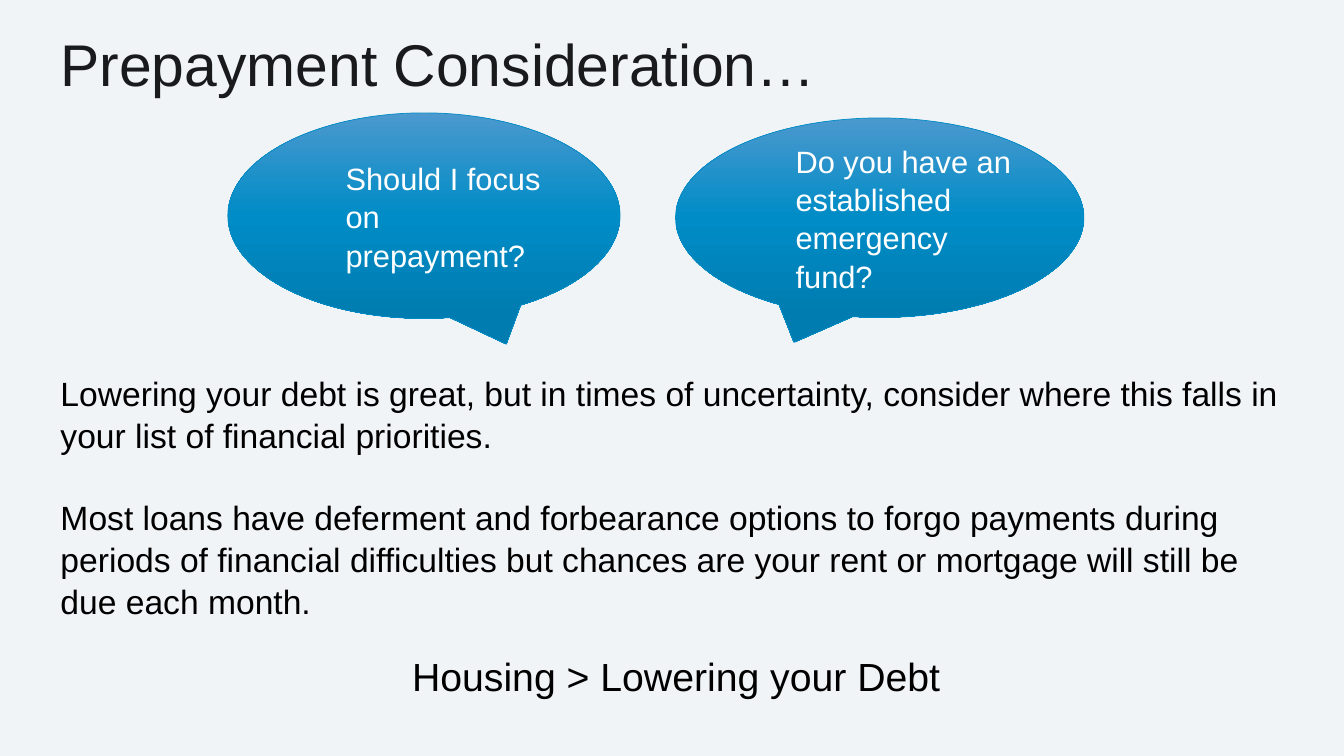
from lxml.etree import SubElement
from pptx import Presentation
from pptx.dml.color import RGBColor
from pptx.enum.shapes import MSO_SHAPE as Shape
from pptx.enum.text import MSO_ANCHOR as Anchor, MSO_AUTO_SIZE as AutoSize, PP_ALIGN as Align
from pptx.oxml.ns import qn
from pptx.util import Inches, Pt

COLORS = {
    "page": "F1F4F7", "title": "181A1C", "body": "000000", "bubble_text": "FFFFFF",
    "bubble_top": "4B99CE", "bubble": "008CC6", "bubble_base": "007CB0",
}
BUBBLE_STOPS = [(0, "bubble_top"), (50, "bubble"), (100, "bubble_base")]
BUBBLE_INDENT = Inches(0.5)
TAIL_SHIFT = 0.21
BUBBLES = [
    ("Do you have an established emergency fund?", (6.7, 1.17, 4.05, 1.98), -TAIL_SHIFT),
    ("Should I focus on prepayment?", (2.26, 1.12, 3.89, 2.04), TAIL_SHIFT),
]
BODY = [
    ("Lowering your debt is great, but in times of uncertainty, consider where this "
     "falls in your list of financial priorities.", 24, 0, Align.LEFT),
    ("Most loans have deferment and forbearance options to forgo payments during periods "
     "of financial difficulties but chances are your rent or mortgage will still be due "
     "each month.", 24, 28.8, Align.LEFT),
    ("Housing > Lowering your Debt", 28, 21.5, Align.CENTER),
]


def color(name):
    return RGBColor.from_string(COLORS[name])


def place(shape, box):
    for name, value in zip(("left", "top", "width", "height"), box):
        setattr(shape, name, Inches(value))


def write(para, text, size, color_name, align=Align.LEFT, before=0, indent=0):
    """Fill one paragraph without a bullet."""
    properties = para._p.get_or_add_pPr()
    properties.set("marL", str(indent))
    properties.set("indent", "0")
    SubElement(properties, qn("a:buNone"))
    layout = {"alignment": align, "space_before": Pt(before), "line_spacing": 1.04}
    for name, value in layout.items():
        setattr(para, name, value)
    span = para.add_run()
    span.text = text
    for name, value in {"name": "Arial", "size": Pt(size)}.items():
        setattr(span.font, name, value)
    span.font.color.rgb = color(color_name)


def set_frame(frame, anchor):
    settings = {"word_wrap": True, "auto_size": AutoSize.NONE, "vertical_anchor": anchor}
    for name, value in settings.items():
        setattr(frame, name, value)


def add_title(page, box):
    title = page.shapes.title
    place(title, box)
    set_frame(title.text_frame, Anchor.MIDDLE)
    write(title.text_frame.paragraphs[0], "Prepayment Consideration…", 42, "title")


def fill_bubble(fill):
    """Shade from top to base; the third stop needs XML."""
    fill.gradient()
    fill.gradient_angle = 270
    stops = fill._xPr.find(qn("a:gradFill")).find(qn("a:gsLst"))
    for stop in list(stops):
        stops.remove(stop)
    for percent, name in BUBBLE_STOPS:
        stop = SubElement(stops, qn("a:gs"), pos=str(percent * 1000))
        SubElement(stop, qn("a:srgbClr"), val=COLORS[name])


def add_bubble(page, text, box, tail):
    bubble = page.shapes.add_shape(Shape.OVAL_CALLOUT, *map(Inches, box))
    bubble.adjustments[0] = tail
    bubble.shadow.inherit = False
    fill_bubble(bubble.fill)
    bubble.line.color.rgb = color("bubble")
    bubble.line.width = Pt(0.5)
    set_frame(bubble.text_frame, Anchor.MIDDLE)
    write(bubble.text_frame.paragraphs[0], text, 22, "bubble_text", indent=BUBBLE_INDENT)


def add_body(page, box):
    body = page.placeholders[1]
    place(body, box)
    frame = body.text_frame
    set_frame(frame, Anchor.TOP)
    for index, (text, size, before, align) in enumerate(BODY):
        para = frame.add_paragraph() if index else frame.paragraphs[0]
        write(para, text, size, "body", align, before)


def main():
    deck = Presentation()
    deck.slide_width, deck.slide_height = Inches(13.33), Inches(7.5)
    page = deck.slides.add_slide(deck.slide_layouts[1])
    page.background.fill.solid()
    page.background.fill.fore_color.rgb = color("page")
    add_title(page, (0.5, 0.3, 9, 0.62))
    for text, box, tail in BUBBLES:
        add_bubble(page, text, box, tail)
    add_body(page, (0.5, 3.63, 12.41, 3.7))
    deck.save("out.pptx")


if __name__ == "__main__":
    main()
